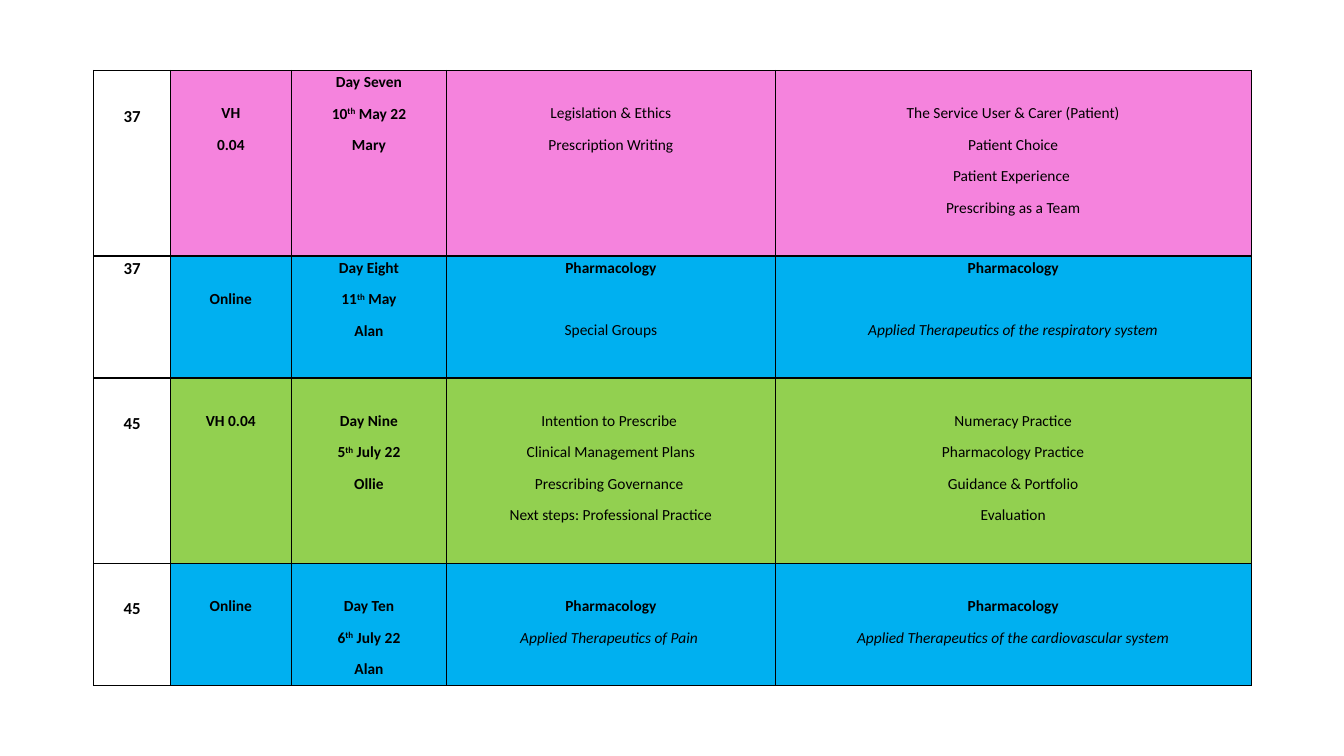
from lxml import etree
from pptx import Presentation
from pptx.dml.color import RGBColor
from pptx.enum.text import PP_ALIGN
from pptx.oxml.ns import qn
from pptx.util import Inches, Pt

CENTER = PP_ALIGN.CENTER
PINK, BLUE, GREEN, BLACK = "F583DD", "00B0F0", "92D050", "000000"
LINE_SPACING, SPACE_AFTER = 1.07, 8


def rgb(value):
    return RGBColor.from_string(value)


def add_text(p, text, size=11, bold=False, italic=False, before=0):
    """Fill a centred paragraph; text between ^ marks is superscript."""
    p.alignment = CENTER
    p.line_spacing = LINE_SPACING
    p.space_before, p.space_after = Pt(before), Pt(SPACE_AFTER)
    for i, part in enumerate(text.split("^")):
        r = p.add_run()
        r.text = part
        r.font.name, r.font.size = "Calibri", Pt(size)
        r.font.bold, r.font.italic = bold, italic
        r.font.color.rgb = rgb(BLACK)
        if i % 2:
            r._r.get_or_add_rPr().set("baseline", "30000")


# Teaching days: colour, height, then the lines of each cell ("" skips a line)
days = [
    (PINK, 1.84, [
        ["", "37"],
        ["", "VH", "0.04"],
        ["Day Seven", "10^th^ May 22", "Mary"],
        ["", "Legislation & Ethics", "Prescription Writing"],
        ["", "The Service User & Carer (Patient)", "Patient Choice",
         "Patient Experience ", "Prescribing as a Team"]]),
    (BLUE, 1.21, [
        ["37"],
        ["", "Online"],
        ["Day Eight", "11^th^ May", "Alan"],
        ["Pharmacology", "", "Special Groups"],
        ["Pharmacology", "", "Applied Therapeutics of the respiratory system"]]),
    (GREEN, 1.84, [
        ["", "45"],
        ["", "VH 0.04"],
        ["", "Day Nine", "5^th^ July 22", "Ollie"],
        ["", "Intention to Prescribe ", "Clinical Management Plans",
         "Prescribing Governance ", "Next steps: Professional Practice"],
        ["", "Numeracy Practice", "Pharmacology Practice",
         "Guidance & Portfolio", "Evaluation"]]),
    (BLUE, 1.21, [
        ["", "45"],
        ["", "Online"],
        ["", "Day Ten", "6^th^ July 22", "Alan"],
        ["", "Pharmacology", "Applied Therapeutics of Pain "],
        ["", "Pharmacology", "Applied Therapeutics of the cardiovascular system"]]),
]
col_widths = [0.76, 1.2, 1.54, 3.26, 4.72]

prs = Presentation()
prs.slide_width, prs.slide_height = Inches(13.33), Inches(7.5)
s = prs.slides.add_slide(prs.slide_layouts[6])

# Timetable grid
table = s.shapes.add_table(len(days), len(col_widths), Inches(0.93), Inches(0.7),
                           Inches(sum(col_widths)), Inches(6.1)).table
table.first_row = table.horz_banding = False
for col, width in zip(table.columns, col_widths):
    col.width = Inches(width)

for row, (color, height, cells) in enumerate(days):
    table.rows[row].height = Inches(height)
    for col, lines in enumerate(cells):
        cell = table.cell(row, col)
        size = 12 if col == 0 else 11
        skip = size * 1.22 * LINE_SPACING + SPACE_AFTER

        # Margins, with a skipped first line as extra top margin
        cell.margin_left = cell.margin_right = Inches(0.08)
        cell.margin_top, cell.margin_bottom = Inches(0.01), Inches(0)
        if not lines[0]:
            cell.margin_top += Pt(skip)
            lines = lines[1:]

        # Borders and fill
        tcPr = cell._tc.get_or_add_tcPr()
        for side in ("a:lnL", "a:lnR", "a:lnT", "a:lnB"):
            ln = etree.SubElement(tcPr, qn(side), w=str(Pt(1)))
            fill = etree.SubElement(ln, qn("a:solidFill"))
            etree.SubElement(fill, qn("a:srgbClr"), val=BLACK)
        if col == 0:
            cell.fill.background()
        else:
            cell.fill.solid()
            cell.fill.fore_color.rgb = rgb(color)

        # Text
        tf = cell.text_frame
        before = 0
        for i, line in enumerate(lines):
            if not line:
                before = skip
                continue
            p = tf.add_paragraph() if i else tf.paragraphs[0]
            add_text(p, line, size=size, before=before,
                     bold=col < 3 or line == "Pharmacology",
                     italic=line.startswith("Applied"))
            before = 0

prs.save("out.pptx")
